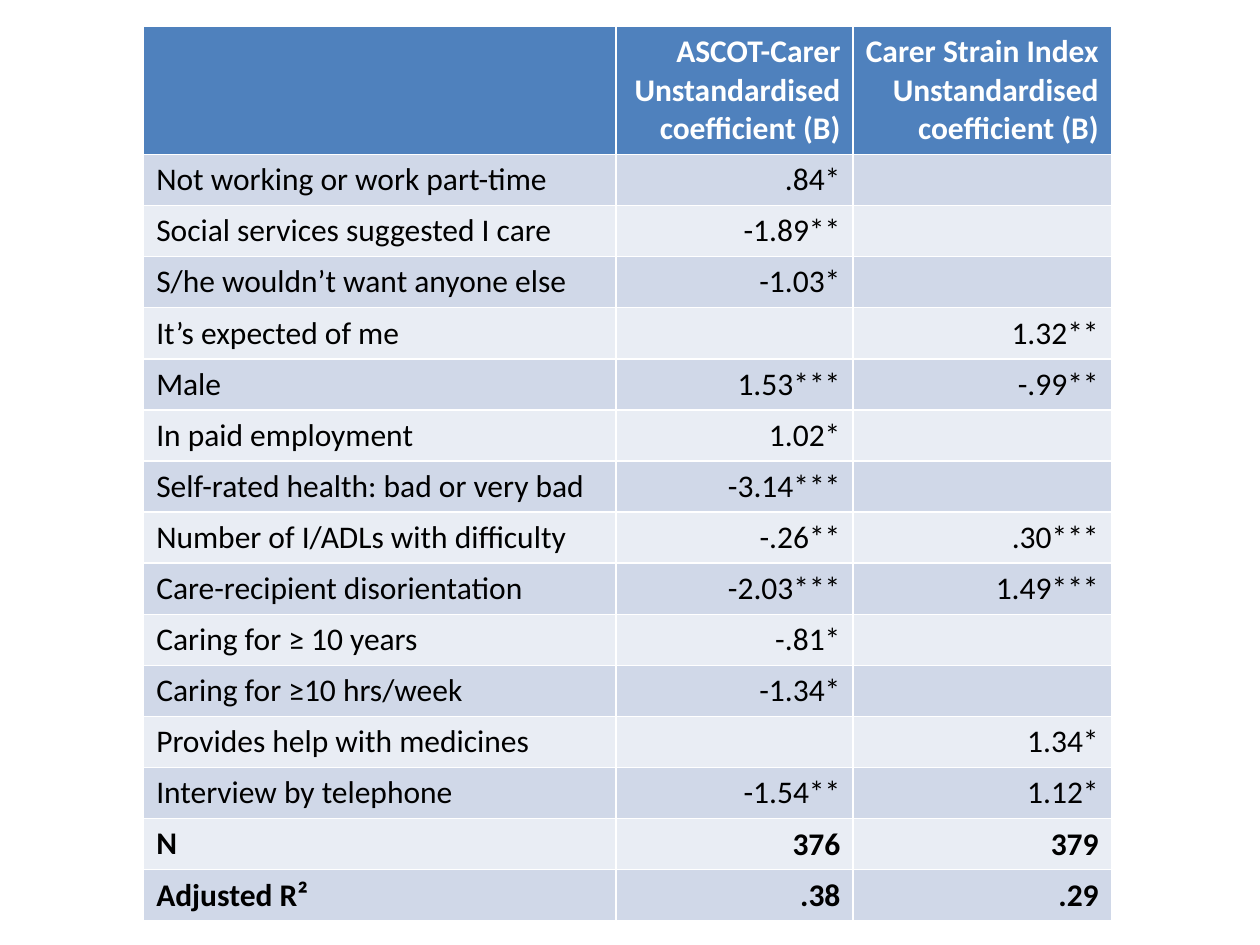
import pptx
import pptx.util
import pptx.dml.color
import pptx.enum.text

Inches = pptx.util.Inches

COLOURS = {
    "header": "4F81BD",
    "band_dark": "D0D8E8",
    "band_light": "E9EDF4",
    "header_text": "FFFFFF",
    "body_text": "000000",
}
COLUMN_WIDTHS = [3.75, 1.88, 2.05]
HEADER_HEIGHT = 0.96
ROW_HEIGHT = 0.38
SUMMARY_LABELS = {"N", "Adjusted R²"}
ROWS = [
    ("", "ASCOT-Carer Unstandardised coefficient (B)",
     "Carer Strain Index Unstandardised coefficient (B)"),
    ("Not working or work part-time", ".84*", ""),
    ("Social services suggested I care", "-1.89**", ""),
    ("S/he wouldn’t want anyone else", "-1.03*", ""),
    ("It’s expected of me", "", "1.32**"),
    ("Male", "1.53***", "-.99**"),
    ("In paid employment", "1.02*", ""),
    ("Self-rated health: bad or very bad", "-3.14***", ""),
    ("Number of I/ADLs with difficulty", "-.26**", ".30***"),
    ("Care-recipient disorientation", "-2.03***", "1.49***"),
    ("Caring for ≥ 10 years", "-.81*", ""),
    ("Caring for ≥10 hrs/week", "-1.34*", ""),
    ("Provides help with medicines", "", "1.34*"),
    ("Interview by telephone", "-1.54**", "1.12*"),
    ("N", "376", "379"),
    ("Adjusted R²", ".38", ".29"),
]


def colour(name):
    return pptx.dml.color.RGBColor.from_string(COLOURS[name])


def fill_cell(cell, text, fill_name, text_name, bold, is_value):
    cell.fill.solid()
    cell.fill.fore_color.rgb = colour(fill_name)
    cell.text = text
    para = cell.text_frame.paragraphs[0]
    para.font.name = "Calibri"
    para.font.size = pptx.util.Pt(18)
    para.font.bold = bold
    para.font.color.rgb = colour(text_name)
    if is_value:
        para.alignment = pptx.enum.text.PP_ALIGN.RIGHT
        cell.vertical_anchor = pptx.enum.text.MSO_ANCHOR.BOTTOM


def add_coefficient_table(page, left, top, width, height):
    frame = page.shapes.add_table(
        len(ROWS), len(COLUMN_WIDTHS), left, top, width, height)
    table = frame.table
    for column, column_width in zip(table.columns, COLUMN_WIDTHS):
        column.width = Inches(column_width)
    for row_index, values in enumerate(ROWS):
        is_header = row_index == 0
        table.rows[row_index].height = Inches(
            HEADER_HEIGHT if is_header else ROW_HEIGHT)
        band = "band_dark" if row_index % 2 else "band_light"
        fill_name = "header" if is_header else band
        text_name = "header_text" if is_header else "body_text"
        bold = is_header or values[0] in SUMMARY_LABELS
        for column_index, text in enumerate(values):
            fill_cell(table.cell(row_index, column_index), text,
                      fill_name, text_name, bold, column_index > 0)


def main():
    deck = pptx.Presentation()
    deck.slide_width = Inches(10)
    deck.slide_height = Inches(7.5)
    page = deck.slides.add_slide(deck.slide_layouts[6])
    add_coefficient_table(
        page, Inches(1.14), Inches(0.21), Inches(7.68), Inches(7))
    deck.save("out.pptx")


if __name__ == "__main__":
    main()
